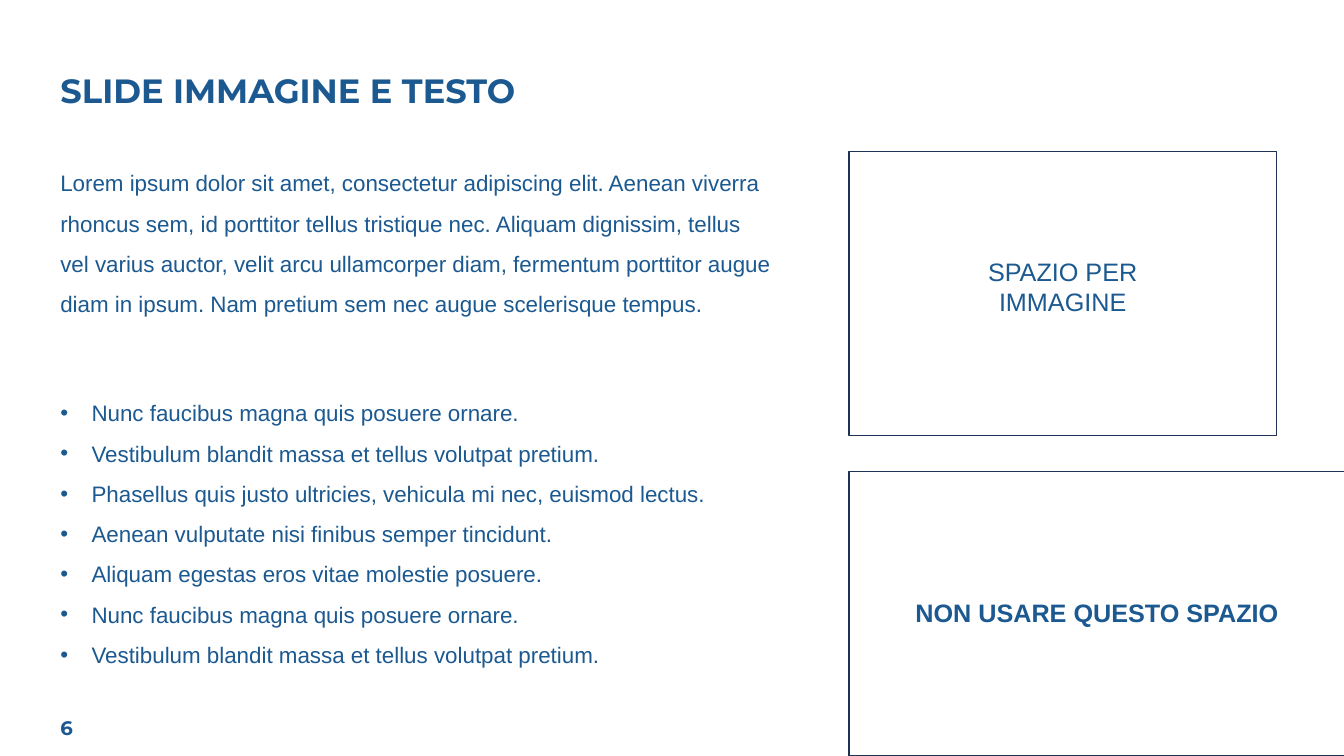
from dataclasses import dataclass

from pptx import Presentation
from pptx.dml.color import RGBColor
from pptx.enum.shapes import MSO_SHAPE
from pptx.enum.text import MSO_ANCHOR as Anchor, MSO_AUTO_SIZE as AutoSize, PP_ALIGN as Align
from pptx.oxml.ns import qn
from pptx.util import Inches, Pt
from lxml import etree


@dataclass(frozen=True)
class Theme:
    text: RGBColor = RGBColor(0x1B, 0x59, 0x90)
    border: RGBColor = RGBColor(0x1E, 0x32, 0x56)
    heading_font: str = "Montserrat"
    body_font: str = "Arial"
    title_size: int = 24
    number_size: int = 14
    caption_size: int = 18
    body_size: int = 16
    border_width: int = 1
    body_spacing: float = 1.5
    bullet_indent: float = 0.31


def write_text(tf, lines, *, size, color, font, bold=False, align=Align.LEFT,
               anchor=Anchor.TOP, spacing=None, indent=None):
    """Fill a text frame, one paragraph per line; an indent adds bullets."""
    tf.word_wrap = True
    tf.auto_size = AutoSize.NONE
    tf.vertical_anchor = anchor
    for i, line in enumerate(lines):
        p = tf.add_paragraph() if i else tf.paragraphs[0]
        p.alignment = align
        if spacing:
            p.line_spacing = spacing
        if indent:
            pPr = p._p.get_or_add_pPr()
            pPr.set("marL", str(Inches(indent)))
            pPr.set("indent", str(-Inches(indent)))
            etree.SubElement(pPr, qn("a:buFont")).set("typeface", "Arial")
            etree.SubElement(pPr, qn("a:buChar")).set("char", "•")
        r = p.add_run()
        r.text = line
        r.font.size = Pt(size)
        r.font.name = font
        r.font.bold = bold
        r.font.color.rgb = color


class SlideBuilder:
    def __init__(self, prs, theme):
        self.theme = theme
        self.slide = prs.slides.add_slide(prs.slide_layouts[5])

    def title(self, text, x, y, w, h):
        sp = self.slide.shapes.title
        sp.left, sp.top, sp.width, sp.height = map(Inches, (x, y, w, h))
        write_text(sp.text_frame, [text], size=self.theme.title_size,
                   color=self.theme.text, font=self.theme.heading_font, bold=True)

    def text(self, lines, x, y, w, h, **fmt):
        sp = self.slide.shapes.add_textbox(*map(Inches, (x, y, w, h)))
        style = {"color": self.theme.text, "font": self.theme.body_font,
                 "size": self.theme.body_size, **fmt}
        write_text(sp.text_frame, lines, **style)

    def frame(self, x, y, w, h):
        sp = self.slide.shapes.add_shape(MSO_SHAPE.RECTANGLE, *map(Inches, (x, y, w, h)))
        sp.shadow.inherit = False
        sp.fill.background()
        sp.line.color.rgb = self.theme.border
        sp.line.width = Pt(self.theme.border_width)

    def captioned_frame(self, caption, x, y, w, h, *, text_top, text_w, text_h, bold=False):
        self.frame(x, y, w, h)
        self.text([caption], x + (w - text_w) / 2, text_top, text_w, text_h,
                  size=self.theme.caption_size, bold=bold, align=Align.CENTER)


INTRO = (
    "Lorem ipsum dolor sit amet, consectetur adipiscing elit. Aenean viverra rhoncus sem, "
    "id porttitor tellus tristique nec. Aliquam dignissim, tellus vel varius auctor, velit "
    "arcu ullamcorper diam, fermentum porttitor augue diam in ipsum. Nam pretium sem nec "
    "augue scelerisque tempus."
)
BULLETS = [
    "Nunc faucibus magna quis posuere ornare.",
    "Vestibulum blandit massa et tellus volutpat pretium.",
    "Phasellus quis justo ultricies, vehicula mi nec, euismod lectus.",
    "Aenean vulputate nisi finibus semper tincidunt.",
    "Aliquam egestas eros vitae molestie posuere.",
    "Nunc faucibus magna quis posuere ornare.",
    "Vestibulum blandit massa et tellus volutpat pretium.",
]
LEFT, TOP = 0.5, 1.5
FRAME_LEFT, FRAME_HEIGHT = 8.42, 2.82


def main():
    prs = Presentation()
    prs.slide_width, prs.slide_height = Inches(13.33), Inches(7.5)
    theme = Theme()
    page = SlideBuilder(prs, theme)

    # Title and page number
    page.title("SLIDE IMMAGINE E TESTO", LEFT, 0.64, 6.78, 0.5)
    page.text(["6"], LEFT, 7.02, 3, 0.4, size=theme.number_size,
              font=theme.heading_font, bold=True, anchor=Anchor.MIDDLE)

    # Reserved area, flush with the bottom right corner
    page.captioned_frame("NON USARE QUESTO SPAZIO", FRAME_LEFT, 7.5 - FRAME_HEIGHT,
                         4.92, FRAME_HEIGHT, text_top=5.88, text_w=3.92, text_h=0.4,
                         bold=True)

    # Image area
    page.captioned_frame("SPAZIO PER IMMAGINE", FRAME_LEFT, TOP, 4.24, FRAME_HEIGHT,
                         text_top=2.49, text_w=2.71, text_h=0.85)

    # Body text and bullet list
    page.text([INTRO], LEFT, TOP, 7.26, 2.07, spacing=theme.body_spacing)
    page.text(BULLETS, LEFT, 3.78, 7.4, 2.88, spacing=theme.body_spacing,
              align=Align.JUSTIFY, indent=theme.bullet_indent)

    prs.save("out.pptx")


if __name__ == "__main__":
    main()
